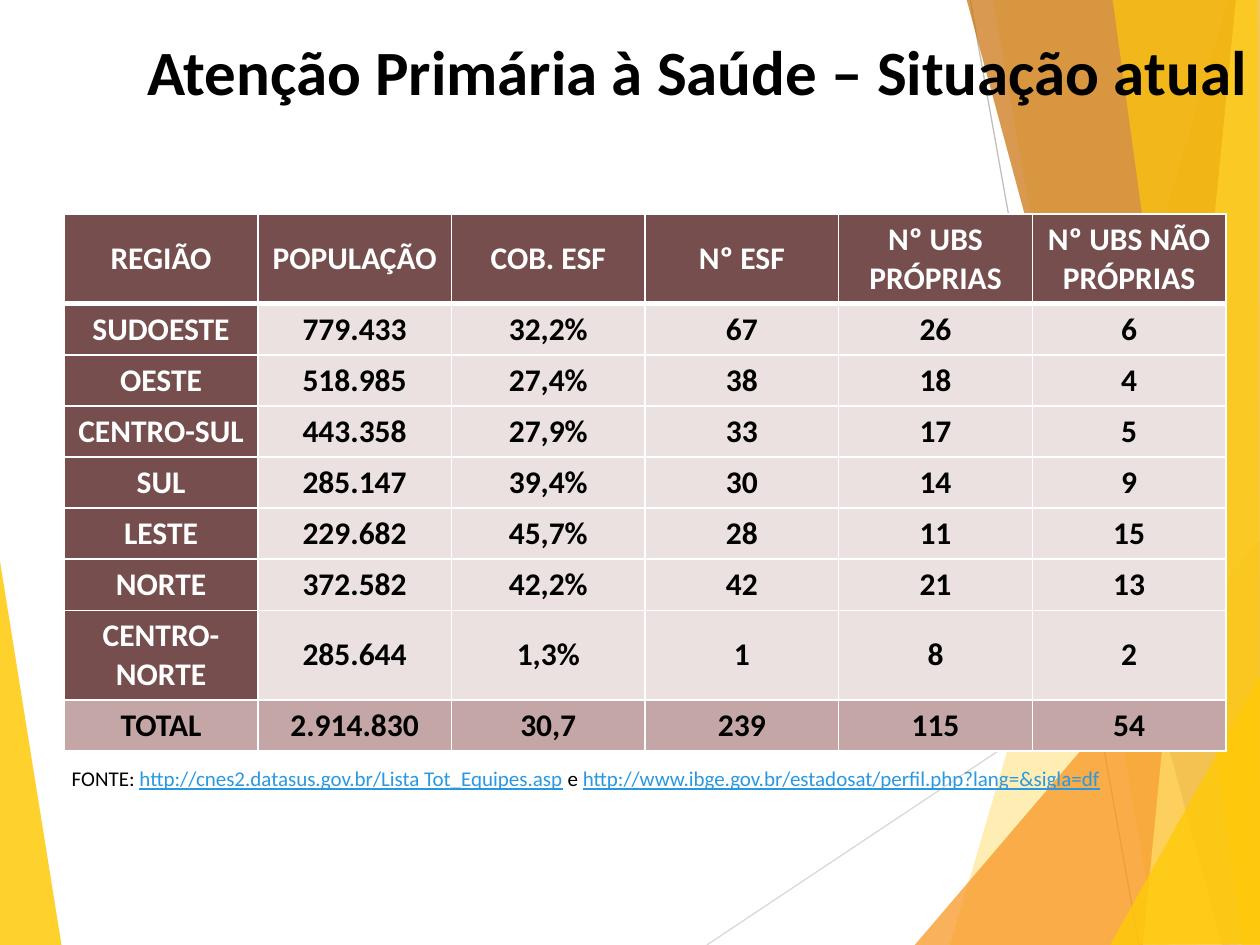
from lxml.etree import SubElement
from pptx import Presentation
from pptx.dml.color import RGBColor
from pptx.enum.shapes import MSO_CONNECTOR
from pptx.enum.text import MSO_ANCHOR, PP_ALIGN
from pptx.oxml.ns import qn
from pptx.util import Inches, Pt

THEME = dict(
    font="Calibri", title=36, table=18, source=12,
    black="000000", white="FFFFFF", link="2998E3",
    header="764E4E", body="EBE1E1", total="C4A6A6",
    gold="FFCA08", orange="F8931D", brown="CA6F06", pale="FFDF6B",
    rays=("D9D9D9", "BFBFBF"), ray_width=0.75, border=1, header_border=3,
)

TITLE = "Atenção Primária à Saúde – Situação atual"
REGIONS = [
    ("REGIÃO", "POPULAÇÃO", "COB. ESF", "Nº ESF", "Nº UBS PRÓPRIAS", "Nº UBS NÃO PRÓPRIAS"),
    ("SUDOESTE", "779.433", "32,2%", "67", "26", "6"),
    ("OESTE", "518.985", "27,4%", "38", "18", "4"),
    ("CENTRO-SUL", "443.358", "27,9%", "33", "17", "5"),
    ("SUL", "285.147", "39,4%", "30", "14", "9"),
    ("LESTE", "229.682", "45,7%", "28", "11", "15"),
    ("NORTE", "372.582", "42,2%", "42", "21", "13"),
    ("CENTRO-NORTE", "285.644", "1,3%", "1", "8", "2"),
    ("TOTAL", "2.914.830", "30,7", "239", "115", "54"),
]
SOURCE = [
    ("FONTE: ", False),
    ("http://cnes2.datasus.gov.br/Lista Tot_Equipes.asp", True),
    (" e ", False),
    ("http://www.ibge.gov.br/estadosat/perfil.php?lang=&sigla=df", True),
]
LEFT_FACET = ("gold", 85, [(-0.01, 4.39), (0.49, 7.51), (-0.01, 7.5)])
RAYS = [(5.61, 7.5, 10.01, 4.57), (7.7, 0, 9.04, 7.5)]
RIGHT_FACETS = [
    ("gold", 30, [(9.75, 0), (7.54, 7.5), (10.02, 7.51), (10.01, 0.01)]),
    ("gold", 20, [(7.88, -0.01), (9.19, 7.5), (10.01, 7.5), (10.01, -0.01)]),
    ("orange", 72, [(7.26, 7.5), (10, 4.29), (10.01, 7.5)]),
    ("brown", 70, [(7.67, -0.01), (9.7, 7.5), (10.01, 7.49), (10.01, -0.01)]),
    ("pale", 70, [(9.81, -0.01), (9.07, 7.5), (10.01, 7.5), (10, -0.01)]),
    ("gold", 65, [(8.83, -0.01), (9.86, 7.5), (10, 7.5), (9.98, -0.01)]),
    ("gold", 80, [(8.81, 7.5), (10.01, 5.35), (10.01, 7.49)]),
]


def rgb(key):
    return RGBColor.from_string(THEME[key])


def add_facet(slide, color, opacity, corners):
    points = [(Inches(x), Inches(y)) for x, y in corners]
    builder = slide.shapes.build_freeform(*points[0])
    builder.add_line_segments(points[1:], close=True)
    facet = builder.convert_to_shape()
    facet.shadow.inherit = False
    facet.line.fill.background()
    facet.fill.solid()
    facet.fill.fore_color.rgb = rgb(color)
    tint = facet.fill._xPr.find(qn("a:solidFill"))[0]
    SubElement(tint, qn("a:alpha"), val=str(opacity * 1000))


def add_ray(slide, ends, color):
    ray = slide.shapes.add_connector(MSO_CONNECTOR.STRAIGHT, *map(Inches, ends))
    ray.line.color.rgb = RGBColor.from_string(color)
    ray.line.width = Pt(THEME["ray_width"])
    SubElement(ray._element.spPr, qn("a:effectLst"))


def add_run(paragraph, text, size, color="black", bold=False, underline=False):
    run = paragraph.add_run()
    run.text = text
    font = run.font
    font.name, font.size = THEME["font"], Pt(THEME[size])
    font.bold, font.underline = bold, underline
    font.color.rgb = rgb(color)


def add_paragraph_box(slide, place, align):
    frame = slide.shapes.add_textbox(*map(Inches, place)).text_frame
    frame.word_wrap = True
    frame.paragraphs[0].alignment = align
    return frame.paragraphs[0]


def set_borders(cell, row):
    properties = cell._tc.get_or_add_tcPr()
    thick_side = {0: "B", 1: "T"}.get(row)
    for side in "LRTB":
        width = THEME["header_border" if side == thick_side else "border"]
        line = SubElement(properties, qn(f"a:ln{side}"), w=str(Pt(width)))
        fill = SubElement(line, qn("a:solidFill"))
        SubElement(fill, qn("a:srgbClr"), val=THEME["white"])


def add_region_table(slide):
    place = map(Inches, (0.51, 1.7, 9.22, 3.65))
    table = slide.shapes.add_table(len(REGIONS), len(REGIONS[0]), *place).table
    for r, values in enumerate(REGIONS):
        for c, value in enumerate(values):
            if r == len(REGIONS) - 1:
                fill, color = "total", "black"
            elif r == 0 or c == 0:
                fill, color = "header", "white"
            else:
                fill, color = "body", "black"
            cell = table.cell(r, c)
            set_borders(cell, r)
            cell.fill.solid()
            cell.fill.fore_color.rgb = rgb(fill)
            cell.vertical_anchor = MSO_ANCHOR.MIDDLE
            paragraph = cell.text_frame.paragraphs[0]
            paragraph.alignment = PP_ALIGN.CENTER
            add_run(paragraph, value, "table", color, bold=True)


def main():
    deck = Presentation()
    deck.slide_width, deck.slide_height = Inches(10), Inches(7.5)
    slide = deck.slides.add_slide(deck.slide_layouts[6])

    add_facet(slide, *LEFT_FACET)
    for ends, color in zip(RAYS, THEME["rays"]):
        add_ray(slide, ends, color)
    for facet in RIGHT_FACETS:
        add_facet(slide, *facet)

    add_region_table(slide)

    source = add_paragraph_box(slide, (0.04, 6.03, 9.22, 0.3), PP_ALIGN.CENTER)
    for text, is_address in SOURCE:
        add_run(source, text, "source", "link" if is_address else "black", underline=is_address)

    title = add_paragraph_box(slide, (0, 0.21, 10, 0.71), PP_ALIGN.RIGHT)
    add_run(title, TITLE, "title", bold=True)

    deck.save("out.pptx")


if __name__ == "__main__":
    main()
